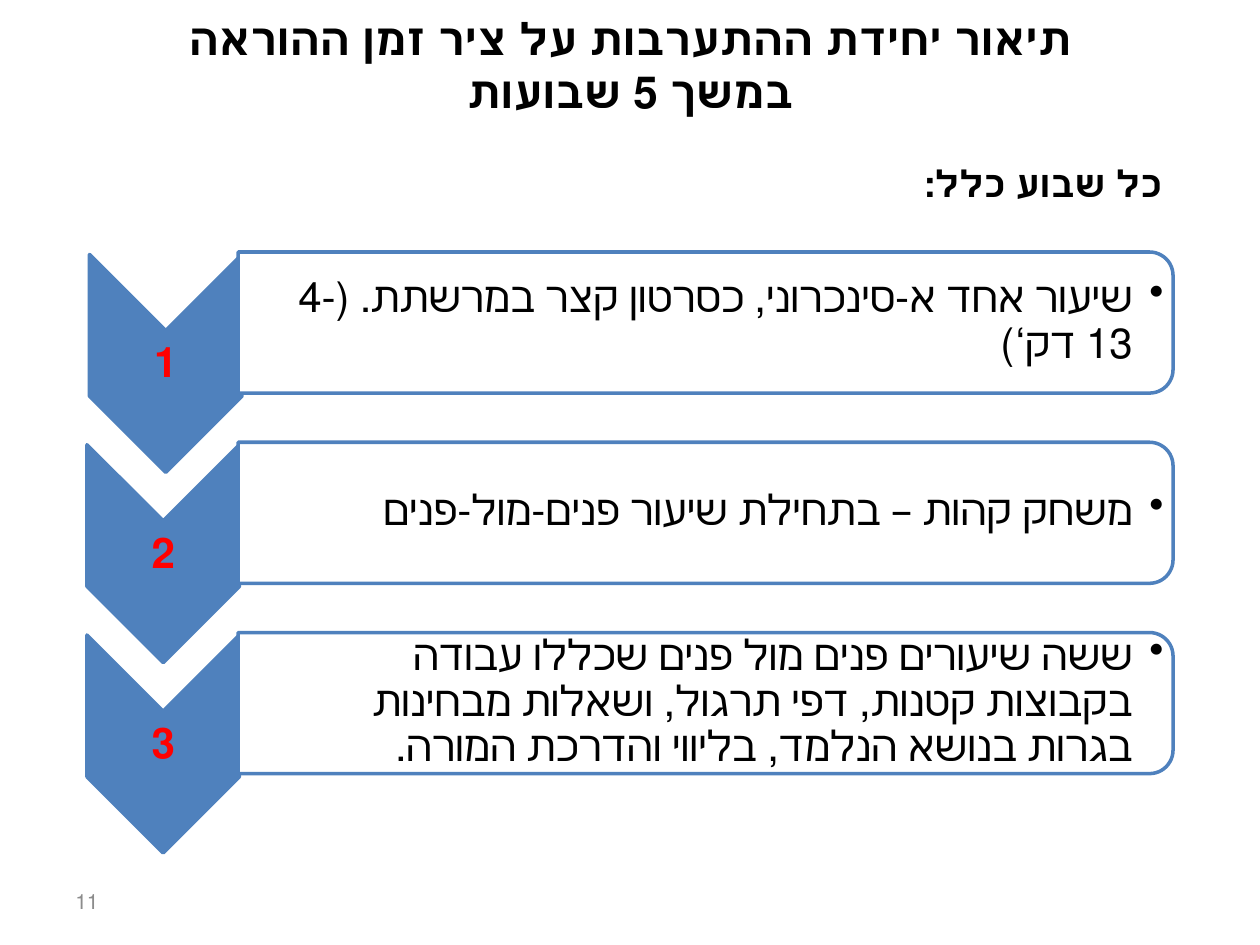
from lxml.etree import SubElement
from pptx import Presentation
from pptx.dml.color import RGBColor
from pptx.enum.shapes import MSO_SHAPE as SHAPE
from pptx.enum.text import MSO_ANCHOR as ANCHOR, PP_ALIGN as ALIGN
from pptx.oxml.ns import qn
from pptx.util import Inches, Pt

prs = Presentation()
prs.slide_width, prs.slide_height = Inches(10), Inches(7.5)
slide = prs.slides.add_slide(prs.slide_layouts[6])
rgb = RGBColor.from_string
BLUE, RED, BLACK, WHITE, GRAY = "4F81BD", "FF0000", "000000", "FFFFFF", "8C8C8C"


def add_text(box, text, size, font, color, align, bold=False,
             anchor=ANCHOR.MIDDLE, margins=(0.1, 0.05, 0.1, 0.05),
             spacing=None, indent=0, bullet=None):
    """Add a right-to-left text box; box and margins are in inches."""
    sp = slide.shapes.add_textbox(*[Inches(v) for v in box])
    tf = sp.text_frame
    tf.word_wrap = True
    tf.vertical_anchor = anchor
    (tf.margin_left, tf.margin_top,
     tf.margin_right, tf.margin_bottom) = [Inches(v) for v in margins]
    tf.text = text
    p = tf.paragraphs[0]
    p.alignment = align
    p.line_spacing = spacing
    pPr = p._p.get_or_add_pPr()
    pPr.set("rtl", "1")
    if indent:
        pPr.set("marL", str(Inches(indent)))
        pPr.set("indent", str(-Inches(indent)))
    if bullet:
        SubElement(pPr, qn("a:buChar")).set("char", bullet)
    for r in p.runs:
        r.font.size, r.font.name, r.font.bold = Pt(size), font, bold
        r.font.color.rgb = rgb(color)
    return p


def add_block(kind, box, fill):
    """Add a blue-lined shape turned a quarter clockwise."""
    sp = slide.shapes.add_shape(kind, *[Inches(v) for v in box])
    sp.rotation = 90
    sp.shadow.inherit = False
    sp.fill.solid()
    sp.fill.fore_color.rgb = rgb(fill)
    sp.line.color.rgb = rgb(BLUE)
    sp.line.width = Pt(2)


# Weekly steps: a chevron with its number beside a rounded panel
steps = [
    "שיעור אחד א-סינכרוני, כסרטון קצר במרשתת. (4-13 דק‘)",
    "משחק קהות – בתחילת שיעור פנים-מול-פנים",
    "ששה שיעורים פנים מול פנים שכללו עבודה בקבוצות קטנות, דפי תרגול, "
    "ושאלות מבחינות בגרות בנושא הנלמד, בליווי והדרכת המורה.",
]
ROW_TOP, ROW_PITCH = 2.05, 1.51
for i, step in enumerate(steps):
    top = ROW_TOP + i * ROW_PITCH
    left = 0.43 if i else 0.45
    add_block(SHAPE.CHEVRON, (left, top + 0.23, 1.73, 1.21), BLUE)
    add_text((left + 0.26, top + 0.58, 1.21, 0.52), str(i + 1), 24, "Calibri",
             RED, ALIGN.CENTER, bold=True, margins=[0.02] * 4, spacing=0.9)
    add_block(SHAPE.ROUND_2_SAME_RECTANGLE, (5.04, top - 3.2, 1.12, 7.42), WHITE)
    add_text((1.9, top, 7.36, 1.01), step, 24, "Lato", BLACK, ALIGN.RIGHT,
             margins=(0.19, 0.02, 0.02, 0.02), spacing=0.9,
             indent=0.25, bullet="•")

# Slide number
add_text((0.5, 6.95, 2.33, 0.4), "11", 12, "Calibri", GRAY, ALIGN.LEFT)

# Title, held in the upper part of its box
add_text((0.69, 0.13, 8.62, 1.18),
         "תיאור יחידת ההתערבות על ציר זמן ההוראה\vבמשך 5 שבועות",
         25.2, "Lato", BLACK, ALIGN.CENTER, bold=True,
         margins=(0.1, 0, 0.1, 0.42))

# Heading above the steps
p = add_text((4.67, 1.27, 4.65, 0.73), "כל שבוע כלל:", 21, "Lato", BLACK,
             ALIGN.RIGHT, bold=True, anchor=ANCHOR.TOP, spacing=0.9, indent=0.19)
p.space_before = Pt(7.5)

prs.save("out.pptx")
